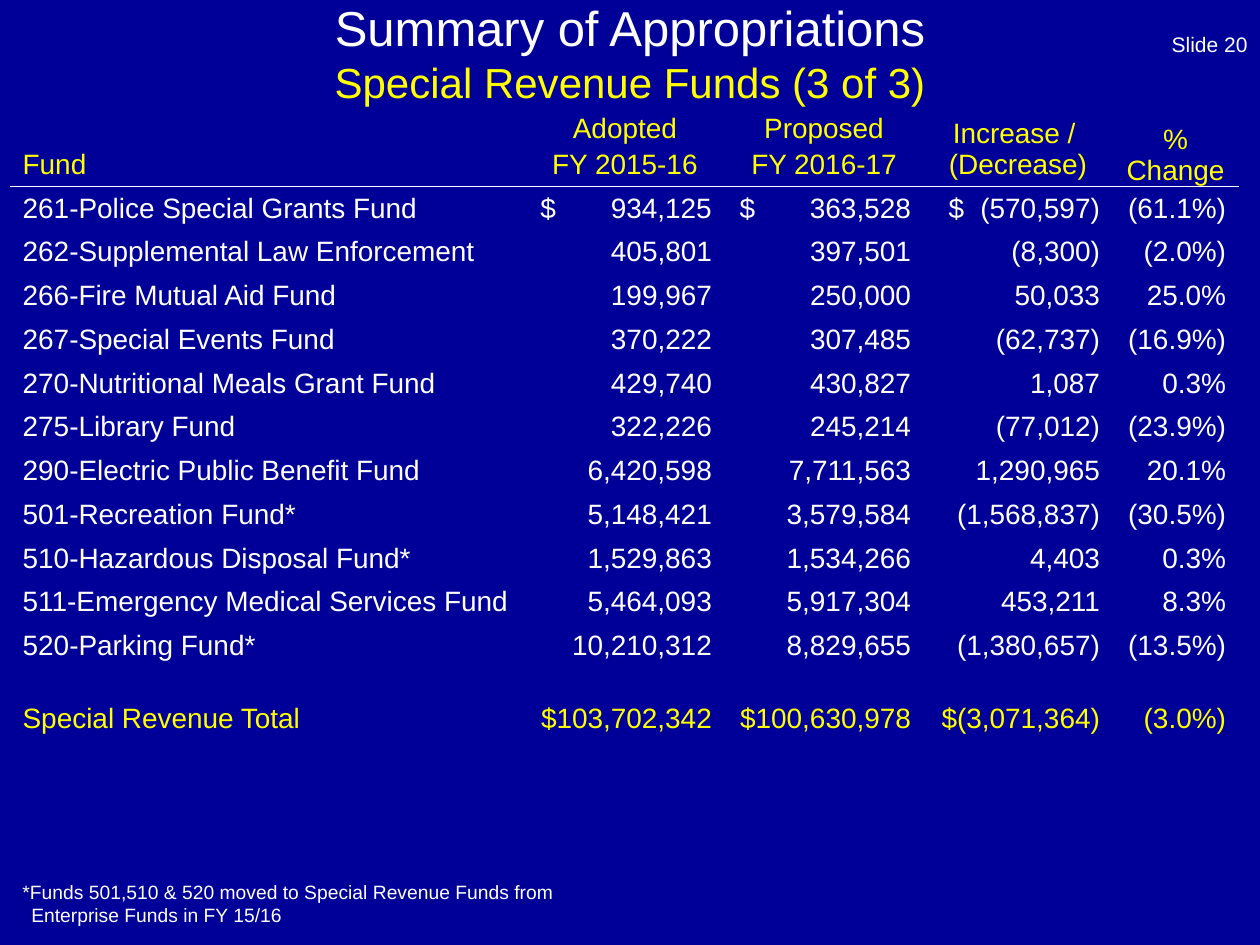
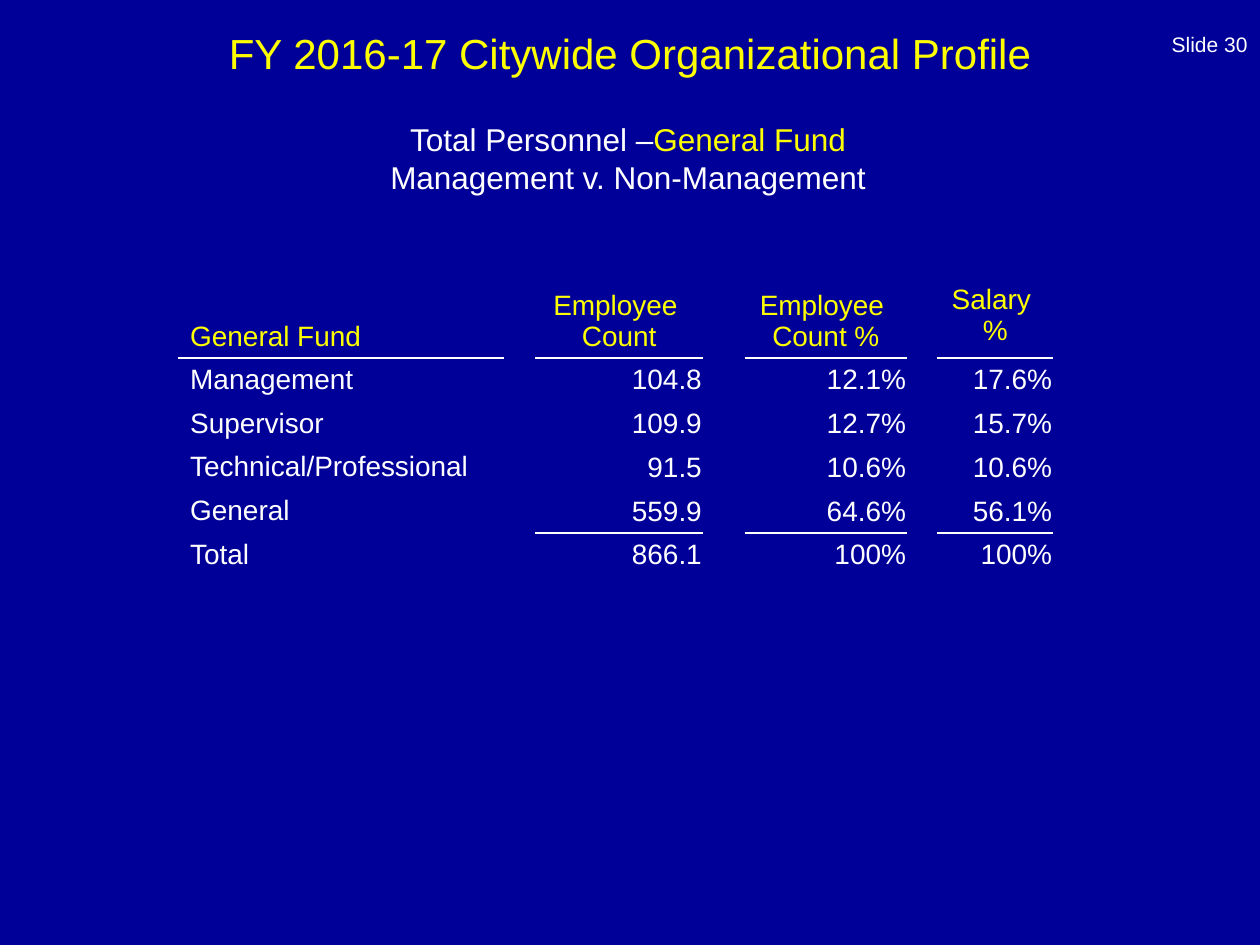
from lxml.etree import SubElement
from pptx import Presentation
from pptx.dml.color import RGBColor
from pptx.enum.text import MSO_ANCHOR, PP_ALIGN
from pptx.oxml.ns import qn
from pptx.util import Inches, Pt

NAVY, WHITE, YELLOW = "000099", "FFFFFF", "FFFF00"
LEFT, CENTER, RIGHT = PP_ALIGN.LEFT, PP_ALIGN.CENTER, PP_ALIGN.RIGHT
NO_TABLE_STYLE = "{2D5ABB26-0587-4C30-8999-92F81FD0307C}"
ROW_HEIGHT = 3.82 / 11
WIDE_MARGINS = (0.1, 0.04, 0.1, 0.04)
HEADER_MARGINS = (0.1, 0, 0.1, 0.05)
TIGHT_MARGINS = (0.01, 0.01, 0.01, 0)

FUND_ROWS = [
    ("261-Police Special Grants Fund", "$\t934,125", "$\t363,528", "$\t(570,597)", "(61.1%)"),
    ("262-Supplemental Law Enforcement", "405,801", "397,501", "(8,300)", "(2.0%)"),
    ("266-Fire Mutual Aid Fund", "199,967", "250,000", "50,033", "25.0%"),
    ("267-Special Events Fund", "370,222", "307,485", "(62,737)", "(16.9%)"),
    ("270-Nutritional Meals Grant Fund", "429,740", "430,827", "1,087", "0.3%"),
    ("275-Library Fund", "322,226", "245,214", "(77,012)", "(23.9%)"),
    ("290-Electric Public Benefit Fund", "6,420,598", "7,711,563", "1,290,965", "20.1%"),
    ("501-Recreation Fund*", "5,148,421", "3,579,584", "(1,568,837)", "(30.5%)"),
    ("510-Hazardous Disposal Fund*", "1,529,863", "1,534,266", "4,403", "0.3%"),
    ("511-Emergency Medical Services Fund", "5,464,093", "5,917,304", "453,211", "8.3%"),
    ("520-Parking Fund*", "10,210,312", "8,829,655", "(1,380,657)", "(13.5%)"),
    ("", "", "", "", ""),
    ("Special Revenue Total", "$103,702,342", "$100,630,978", "$(3,071,364)", "(3.0%)"),
]

STAFF_ROWS = [
    ("Management", "104.8", "12.1%", "17.6%"),
    ("Supervisor", "109.9", "12.7%", "15.7%"),
    ("Technical/Professional", "91.5", "10.6%", "10.6%"),
    ("General", "559.9", "64.6%", "56.1%"),
    ("Total", "866.1", "100%", "100%"),
]


def rgb(value):
    return RGBColor.from_string(value)


def style_font(font, size, color):
    font.name = "Arial"
    font.size = Pt(size)
    font.color.rgb = rgb(color)


class Deck:
    """Holds the shared style and the slide being built."""

    def __init__(self):
        self.deck = Presentation()
        self.deck.slide_width, self.deck.slide_height = Inches(10), Inches(7.5)
        self.page = None

    def start_page(self, number):
        self.page = self.deck.slides.add_slide(self.deck.slide_layouts[6])
        fill = self.page.background.fill
        fill.solid()
        fill.fore_color.rgb = rgb(NAVY)
        self.text(7.67, 0, 2.33, 0.5, [[(f"Slide {number}", 12, WHITE)]],
                  RIGHT, MSO_ANCHOR.BOTTOM)

    def text(self, left, top, width, height, lines, align=CENTER, anchor=MSO_ANCHOR.MIDDLE):
        """Add one paragraph; each line is a list of (text, size, color) spans."""
        box = self.page.shapes.add_textbox(
            Inches(left), Inches(top), Inches(width), Inches(height))
        frame = box.text_frame
        frame.word_wrap = True
        frame.vertical_anchor = anchor
        para = frame.paragraphs[0]
        para.alignment = align
        for index, line in enumerate(lines):
            if index:
                para.add_line_break()
            for content, size, color in line:
                span = para.add_run()
                span.text = content
                style_font(span.font, size, color)
        return para

    def title(self, *lines):
        self.text(0.33, 0.08, 9.34, 0.67, [[line] for line in lines])

    def table(self, left, top, widths, heights):
        """Add a table with no fills and no borders."""
        frame = self.page.shapes.add_table(
            len(heights), len(widths), Inches(left), Inches(top),
            Inches(sum(widths)), Inches(sum(heights)))
        table = frame.table
        table.first_row = table.horz_banding = False
        table._tbl.tblPr.find(qn("a:tableStyleId")).text = NO_TABLE_STYLE
        for column, width in zip(table.columns, widths):
            column.width = Inches(width)
        for row, height in zip(table.rows, heights):
            row.height = Inches(height)
        for cell in table.iter_cells():
            properties = cell._tc.get_or_add_tcPr()
            for side in ("lnL", "lnR", "lnT", "lnB"):
                line = SubElement(properties, qn(f"a:{side}"), w="12700")
                SubElement(line, qn("a:noFill"))
            cell.fill.background()
            # Keeps empty cells from stretching their row
            cell.text_frame.paragraphs[0]._p.get_or_add_endParaRPr().set("sz", "800")
        return table

    def cell(self, cell, content, color=WHITE, align=RIGHT, anchor=MSO_ANCHOR.MIDDLE,
             margins=WIDE_MARGINS, gap=0):
        """Fill a cell; a newline starts a paragraph, set off by gap points."""
        (cell.margin_left, cell.margin_top,
         cell.margin_right, cell.margin_bottom) = map(Inches, margins)
        cell.vertical_anchor = anchor
        cell.text = content
        for index, para in enumerate(cell.text_frame.paragraphs):
            para.alignment = align
            if index and gap:
                para.space_before = Pt(gap)
            style_font(para.font, 16, color)

    def amount(self, cell, content, width, indent):
        """Put a currency sign at the left and its figure at the right edge."""
        self.cell(cell, content, align=LEFT, margins=(indent, 0.04, 0.09, 0.04))
        para = cell.text_frame.paragraphs[0]
        properties = para._p.get_or_add_pPr()
        stops = SubElement(properties, qn("a:tabLst"))
        position = Inches(width - indent - 0.1)
        SubElement(stops, qn("a:tab"), pos=str(position), algn="r")
        properties.insert(0, stops)

    def rule(self, upper, lower):
        """Draw a line between two cells that meet."""
        for cell, side in ((upper, "lnB"), (lower, "lnT")):
            line = cell._tc.tcPr.find(qn(f"a:{side}"))
            line.remove(line[0])
            fill = SubElement(line, qn("a:solidFill"))
            SubElement(fill, qn("a:srgbClr"), val=WHITE)


def build_appropriations(deck):
    deck.start_page(20)
    deck.title(("Summary of Appropriations", 28, WHITE),
               ("Special Revenue Funds (3 of 3)", 24, YELLOW))

    widths = [4.09, 1.58, 1.58, 1.5, 1]
    heights = [0.63] + [ROW_HEIGHT] * 11 + [0.22, ROW_HEIGHT]
    table = deck.table(0.08, 0.85, widths, heights)
    headers = [
        ("Fund", LEFT, HEADER_MARGINS, 0),
        ("Adopted\nFY 2015-16", CENTER, HEADER_MARGINS, 2.5),
        ("Proposed\nFY 2016-17", CENTER, HEADER_MARGINS, 2.5),
        ("Increase / \n(Decrease)", CENTER, HEADER_MARGINS, 0),
        ("%\nChange", CENTER, TIGHT_MARGINS, 0),
    ]
    for column, (label, align, margins, gap) in enumerate(headers):
        deck.cell(table.cell(0, column), label, YELLOW, align,
                  MSO_ANCHOR.BOTTOM, margins, gap)
        deck.rule(table.cell(0, column), table.cell(1, column))

    for row, values in enumerate(FUND_ROWS, 1):
        color = YELLOW if row == len(FUND_ROWS) else WHITE
        for column, value in enumerate(values):
            cell = table.cell(row, column)
            if "\t" in value:
                deck.amount(cell, value, widths[column], 0.2 if column == 3 else 0.12)
            elif value:
                deck.cell(cell, value, color, RIGHT if column else LEFT)

    note = "*Funds 501,510 & 520 moved to Special Revenue Funds from Enterprise Funds in FY 15/16"
    para = deck.text(0.08, 6.94, 4.5, 0.47, [[(note, 11, WHITE)]], LEFT, MSO_ANCHOR.TOP)
    properties = para._p.get_or_add_pPr()
    properties.set("marL", str(Inches(0.07)))
    properties.set("indent", str(Inches(-0.07)))


def build_organization(deck):
    deck.start_page(30)
    deck.text(0.32, 0.92, 9.33, 0.67, [
        [("Total Personnel –", 18, WHITE), ("General Fund", 18, YELLOW)],
        [("Management v. Non-Management", 18, WHITE)],
    ])

    widths = [2.59, 0.25, 1.33, 0.33, 1.29, 0.23, 0.92]
    table = deck.table(1.41, 2.17, widths, [0.67] + [ROW_HEIGHT] * 5)
    headers = ["General Fund", "Employee \nCount", "Employee \nCount %", "Salary \n%"]
    for index, label in enumerate(headers):
        column = 2 * index  # narrow spacer columns lie between
        anchor = MSO_ANCHOR.MIDDLE if label.startswith("Salary") else MSO_ANCHOR.BOTTOM
        deck.cell(table.cell(0, column), label, YELLOW, CENTER if index else LEFT, anchor)
        deck.rule(table.cell(0, column), table.cell(1, column))
        for row, values in enumerate(STAFF_ROWS, 1):
            deck.cell(table.cell(row, column), values[index],
                      align=RIGHT if index else LEFT,
                      margins=TIGHT_MARGINS if index else WIDE_MARGINS)
        if index:
            deck.rule(table.cell(4, column), table.cell(5, column))

    deck.title(("FY 2016-17 Citywide Organizational Profile", 24, YELLOW))


def main():
    deck = Deck()
    build_appropriations(deck)
    build_organization(deck)
    deck.deck.save("out.pptx")


if __name__ == "__main__":
    main()
